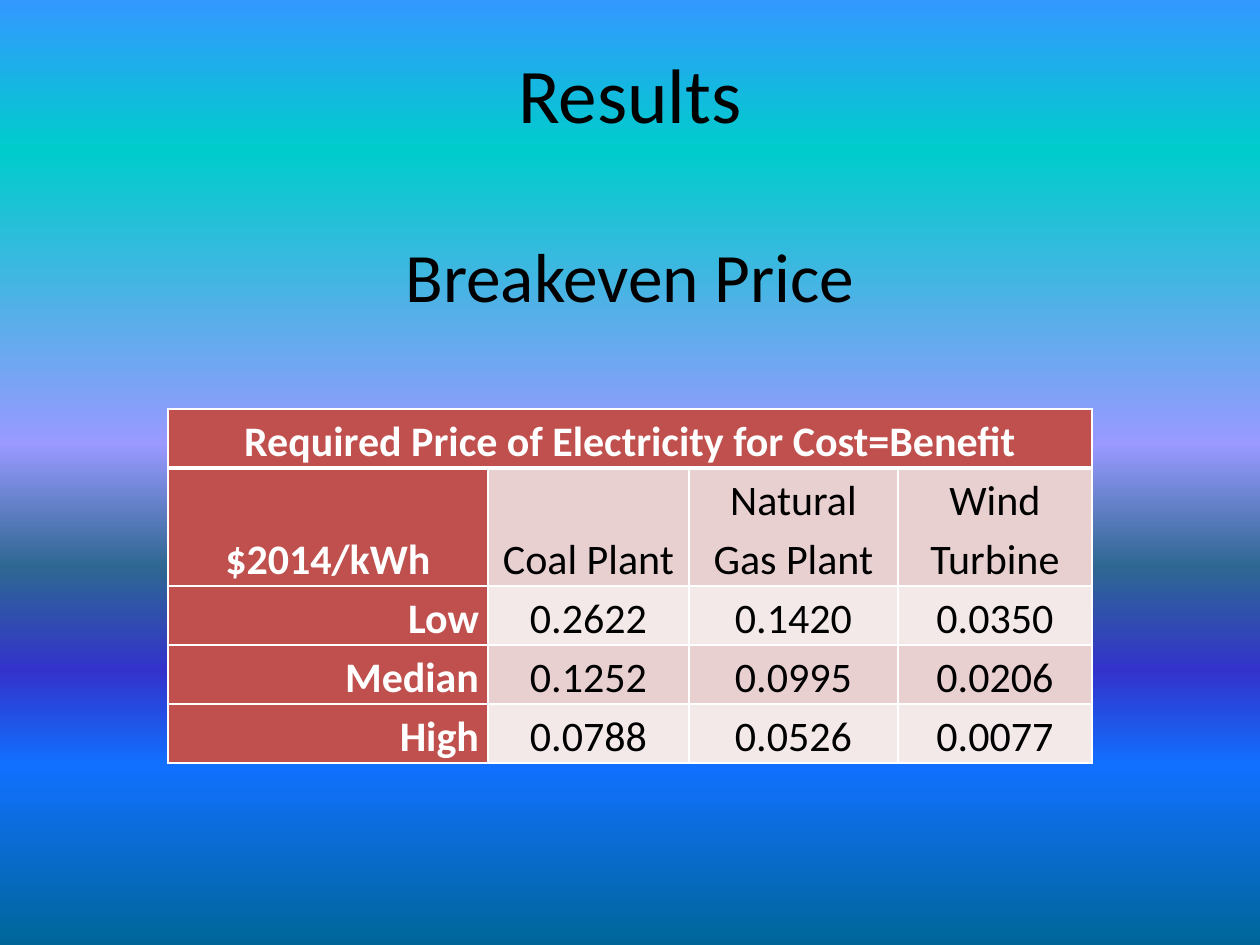
from copy import deepcopy

from lxml import etree
from pptx import Presentation
from pptx.dml.color import RGBColor
from pptx.enum.text import MSO_ANCHOR, PP_ALIGN
from pptx.oxml.ns import qn
from pptx.util import Pt

MIDDLE, BOTTOM = MSO_ANCHOR.MIDDLE, MSO_ANCHOR.BOTTOM
CENTER, RIGHT = PP_ALIGN.CENTER, PP_ALIGN.RIGHT
WHITE, BLACK, RED = "FFFFFF", "000000", "C0504D"
BANDS = ["F4E9E9", "E8D0D0"]


def px(n):
    """Turn pixels, 126 to the inch, into EMU."""
    return round(n * 914400 / 126)


def add_run(para, text, size, color, bold=False):
    run = para.add_run()
    run.text = text
    run.font.name = "Calibri"
    run.font.size = Pt(size)
    run.font.bold = bold
    run.font.color.rgb = RGBColor.from_string(color)


deck = Presentation()
deck.slide_width, deck.slide_height = px(1260), px(945)
slide = deck.slides.add_slide(deck.slide_layouts[5])

# Background gradient, top to bottom
stops = [(0, "3399FF"), (16, "00CCCC"), (47, "9999FF"), (60, "2E6792"),
         (71, "3333CC"), (81, "1170FF"), (100, "006699")]
fill = slide.background.fill
fill.gradient()
fill.gradient_angle = 270
ramp = next(slide.element.iter(qn("a:gsLst")))
while len(ramp) < len(stops):
    ramp.append(deepcopy(ramp[0]))
for stop, (pos, color) in zip(fill.gradient_stops, stops):
    stop.position = pos / 100
    stop.color.rgb = RGBColor.from_string(color)

# Title
title = slide.shapes.title
title.left, title.top, title.width, title.height = map(px, (63, 38, 1134, 287))
frame = title.text_frame
frame.word_wrap = True
frame.vertical_anchor = MIDDLE
head, sub = frame.paragraphs[0], frame.add_paragraph()
head.alignment = sub.alignment = CENTER
sub.space_before = Pt(54)
add_run(head, "Results", 44.1, BLACK)
add_run(sub, "Breakeven Price", 39.6, BLACK)

# Price table
rows = [
    ["Required Price of Electricity for Cost=Benefit"],
    ["$2014/kWh", "Coal Plant", "Natural Gas Plant", "Wind Turbine"],
    ["Low", "0.2622", "0.1420", "0.0350"],
    ["Median", "0.1252", "0.0995", "0.0206"],
    ["High", "0.0788", "0.0526", "0.0077"],
]
widths = [320, 201, 209, 194]
heights = [59, 118, 59, 59, 59]
table = slide.shapes.add_table(len(rows), len(widths), px(168), px(409),
                               px(sum(widths)), px(sum(heights))).table
for col, width in zip(table.columns, widths):
    col.width = px(width)
for row, height in zip(table.rows, heights):
    row.height = px(height)
table.cell(0, 0).merge(table.cell(0, 3))

for r, row in enumerate(table.rows):
    for c, cell in enumerate(row.cells):
        key = r == 0 or c == 0
        cell.fill.solid()
        cell.fill.fore_color.rgb = RGBColor.from_string(RED if key else BANDS[r % 2])
        cell.vertical_anchor = BOTTOM
        cell.margin_left = cell.margin_right = px(9)
        cell.margin_top = cell.margin_bottom = 0
        if c < len(rows[r]):
            para = cell.text_frame.paragraphs[0]
            para.alignment = RIGHT if c == 0 and r > 1 else CENTER
            para.line_spacing = 1.15
            add_run(para, rows[r][c], 24, WHITE if key else BLACK, key)
        props = cell._tc.get_or_add_tcPr()
        for i, side in enumerate("LRTB"):
            thick = (r, side) in [(0, "B"), (1, "T")]
            line = etree.Element(qn("a:ln" + side), w=str(Pt(3 if thick else 1)))
            solid = etree.SubElement(line, qn("a:solidFill"))
            etree.SubElement(solid, qn("a:srgbClr"), val=WHITE)
            props.insert(i, line)

deck.save("out.pptx")
